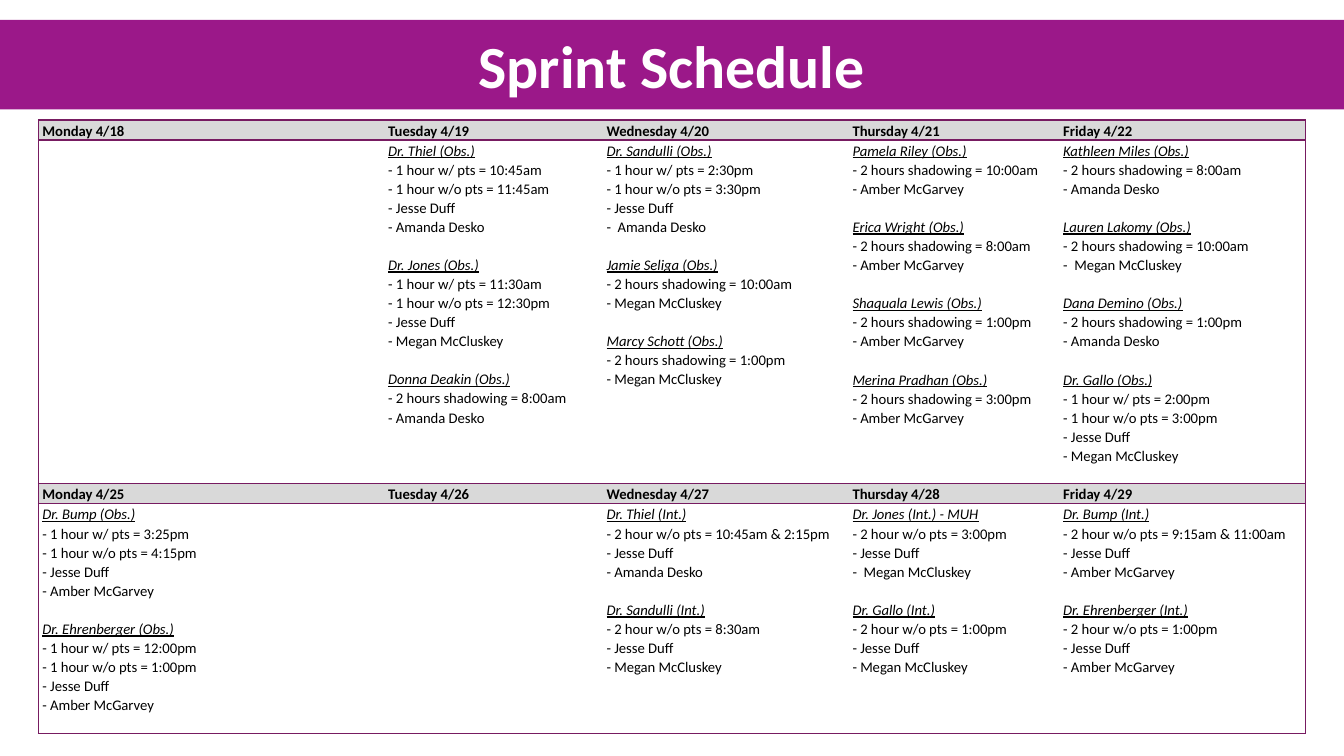
from lxml import etree
from pptx import Presentation
from pptx.dml.color import RGBColor
from pptx.enum import text
from pptx.oxml import ns
from pptx.util import Pt

WEEKS = [
    [
        ("Monday 4/18", []),
        ("Tuesday 4/19", [
            "Dr. Thiel (Obs.)|- 1 hour w/ pts = 10:45am|- 1 hour w/o pts = 11:45am|- Jesse Duff|- Amanda Desko",
            "Dr. Jones (Obs.)|- 1 hour w/ pts = 11:30am|- 1 hour w/o pts = 12:30pm|- Jesse Duff|- Megan McCluskey",
            "Donna Deakin (Obs.)|- 2 hours shadowing = 8:00am|- Amanda Desko"]),
        ("Wednesday 4/20", [
            "Dr. Sandulli (Obs.)|- 1 hour w/ pts = 2:30pm|- 1 hour w/o pts = 3:30pm|- Jesse Duff|-  Amanda Desko",
            "Jamie Seliga (Obs.)|- 2 hours shadowing = 10:00am|- Megan McCluskey",
            "Marcy Schott (Obs.)|- 2 hours shadowing = 1:00pm|- Megan McCluskey"]),
        ("Thursday 4/21", [
            "Pamela Riley (Obs.)|- 2 hours shadowing = 10:00am|- Amber McGarvey",
            "Erica Wright (Obs.)|- 2 hours shadowing = 8:00am|- Amber McGarvey",
            "Shaquala Lewis (Obs.)|- 2 hours shadowing = 1:00pm|- Amber McGarvey",
            "Merina Pradhan (Obs.)|- 2 hours shadowing = 3:00pm|- Amber McGarvey"]),
        ("Friday 4/22", [
            "Kathleen Miles (Obs.)|- 2 hours shadowing = 8:00am|- Amanda Desko",
            "Lauren Lakomy (Obs.)|- 2 hours shadowing = 10:00am|-  Megan McCluskey",
            "Dana Demino (Obs.)|- 2 hours shadowing = 1:00pm|- Amanda Desko",
            "Dr. Gallo (Obs.)|- 1 hour w/ pts = 2:00pm|- 1 hour w/o pts = 3:00pm|- Jesse Duff|- Megan McCluskey"]),
    ],
    [
        ("Monday 4/25", [
            "Dr. Bump (Obs.)|- 1 hour w/ pts = 3:25pm|- 1 hour w/o pts = 4:15pm|- Jesse Duff|- Amber McGarvey",
            "Dr. Ehrenberger (Obs.)|- 1 hour w/ pts = 12:00pm|- 1 hour w/o pts = 1:00pm|- Jesse Duff|- Amber McGarvey"]),
        ("Tuesday 4/26", []),
        ("Wednesday 4/27", [
            "Dr. Thiel (Int.)|- 2 hour w/o pts = 10:45am & 2:15pm|- Jesse Duff|- Amanda Desko",
            "Dr. Sandulli (Int.)|- 2 hour w/o pts = 8:30am|- Jesse Duff|- Megan McCluskey"]),
        ("Thursday 4/28", [
            "Dr. Jones (Int.) - MUH|- 2 hour w/o pts = 3:00pm|- Jesse Duff|-  Megan McCluskey",
            "Dr. Gallo (Int.)|- 2 hour w/o pts = 1:00pm|- Jesse Duff|- Megan McCluskey"]),
        ("Friday 4/29", [
            "Dr. Bump (Int.)|- 2 hour w/o pts = 9:15am & 11:00am|- Jesse Duff|- Amber McGarvey",
            "Dr. Ehrenberger (Int.)|- 2 hour w/o pts = 1:00pm|- Jesse Duff|- Amber McGarvey"]),
    ],
]
WIDTHS = [247, 156, 175.7, 150.5, 175.7]
HEIGHTS = [13.9, 245.6, 13.9, 163.9]


def hue(code):
    return RGBColor.from_string(code)


class Page:
    """Holds the style and the current slide, and adds its elements."""

    font = "Calibri"
    size = 10.5
    ink = "000000"
    rule = "771B61"
    band = "9B1889"
    head = "D9D9D9"

    def __init__(self, slide):
        self.slide = slide

    def run(self, para, words, size, color, bold=False, name=False):
        run = para.add_run()
        run.text = words
        font = run.font
        font.name, font.size, font.bold = self.font, Pt(size), bold
        font.italic = font.underline = name
        font.color.rgb = hue(color)

    def title(self, words, left, top, width, height):
        box = self.slide.shapes.title
        box.left, box.top, box.width, box.height = map(Pt, (left, top, width, height))
        box.fill.solid()
        box.fill.fore_color.rgb = hue(self.band)
        frame = box.text_frame
        frame.word_wrap = True
        frame.auto_size = text.MSO_AUTO_SIZE.NONE
        frame.vertical_anchor = text.MSO_ANCHOR.MIDDLE
        para = frame.paragraphs[0]
        para.alignment = text.PP_ALIGN.CENTER
        self.run(para, words, 42.7, "FFFFFF", bold=True)

    def edge(self, cell, side, drawn):
        line = etree.SubElement(cell._tc.get_or_add_tcPr(), ns.qn(f"a:ln{side}"), w=str(Pt(1)))
        if drawn:
            fill = etree.SubElement(line, ns.qn("a:solidFill"))
            etree.SubElement(fill, ns.qn("a:srgbClr"), val=self.rule)
        else:
            etree.SubElement(line, ns.qn("a:noFill"))

    def cell(self, cell, first, last, shade):
        for side, drawn in (("L", first), ("R", last), ("T", True), ("B", True)):
            self.edge(cell, side, drawn)
        if shade:
            cell.fill.solid()
            cell.fill.fore_color.rgb = hue(self.head)
        else:
            cell.fill.background()
        cell.margin_left = cell.margin_right = Pt(2.9)
        cell.margin_top, cell.margin_bottom = Pt(0.7), Pt(0)

    def lines(self, cell, visits, bold=False):
        frame = cell.text_frame
        para = frame.paragraphs[0]
        para.font.size = Pt(self.size)
        for i, visit in enumerate(visits):
            for j, words in enumerate(visit.split("|")):
                if i or j:
                    para = frame.add_paragraph()
                para.line_spacing = 1.07
                if i and not j:
                    para.space_before = Pt(13.7)
                self.run(para, words, self.size, self.ink, bold, name=not bold and not j)

    def table(self, weeks, left, top):
        shape = self.slide.shapes.add_table(
            len(HEIGHTS), len(WIDTHS), Pt(left), Pt(top), Pt(sum(WIDTHS)), Pt(sum(HEIGHTS)))
        grid = shape.table
        grid.first_row = grid.horz_banding = False
        for col, width in zip(grid.columns, WIDTHS):
            col.width = Pt(width)
        for row, height in zip(grid.rows, HEIGHTS):
            row.height = Pt(height)
        for w, week in enumerate(weeks):
            for d, (day, visits) in enumerate(week):
                for k, words in enumerate(([day], visits)):
                    cell = grid.cell(2 * w + k, d)
                    self.cell(cell, d == 0, d == len(week) - 1, shade=k == 0)
                    self.lines(cell, words, bold=k == 0)


def main():
    deck = Presentation()
    deck.slide_width, deck.slide_height = Pt(960), Pt(540)
    page = Page(deck.slides.add_slide(deck.slide_layouts[5]))
    page.title("Sprint Schedule", 0, 14.2, 960, 64)
    page.table(WEEKS, 27.4, 85.7)
    deck.save("out.pptx")


if __name__ == "__main__":
    main()
